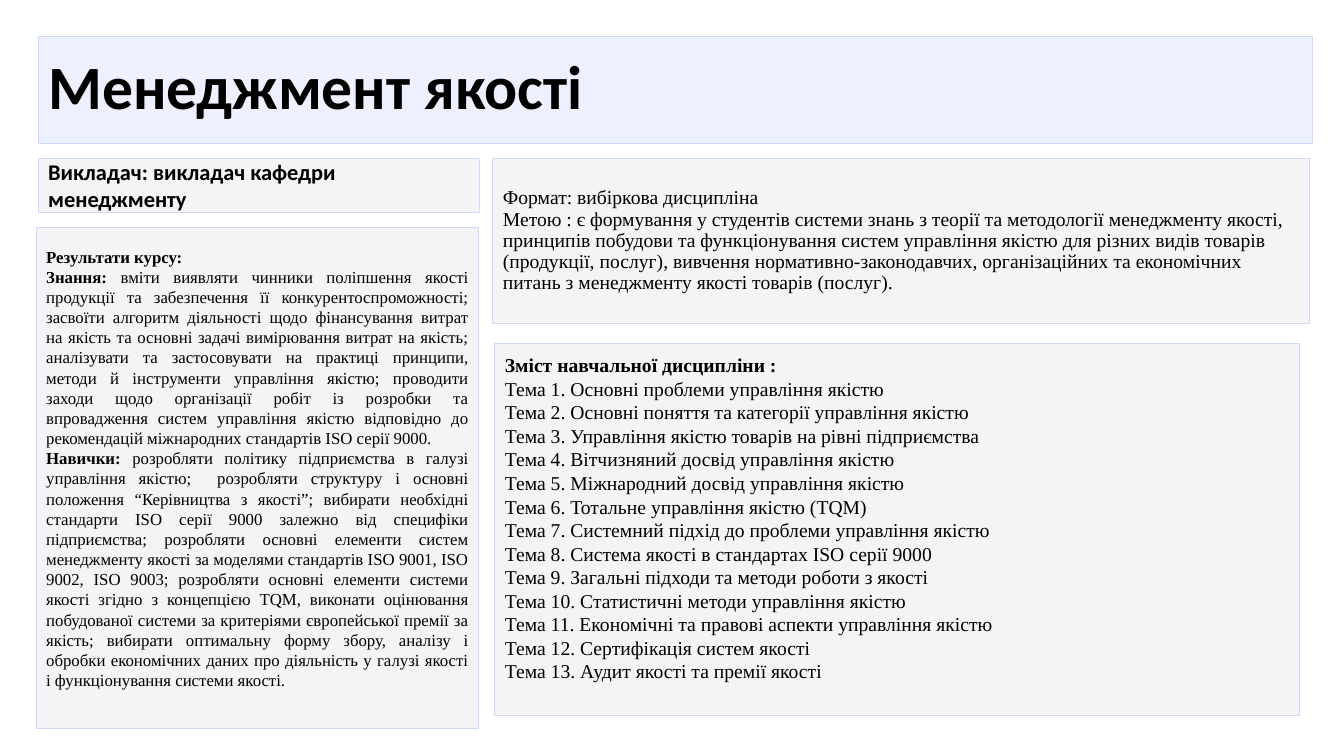
"""Build the course overview slide for quality management."""
import pptx
import pptx.dml.color
import pptx.enum.shapes
import pptx.enum.text
import pptx.util
from lxml import etree

RGBColor = pptx.dml.color.RGBColor
Align = pptx.enum.text.PP_ALIGN
Pt = pptx.util.Pt
BLACK = RGBColor(0x00, 0x00, 0x00)
TITLE_BLUE = RGBColor(0xE5, 0xEB, 0xFF)
PANEL_GRAY = RGBColor(0xF0, 0xF0, 0xF0)
BORDER_BLUE = RGBColor(0xCD, 0xD9, 0xFF)
SERIF, SANS = "Times New Roman", "Calibri"

course = pptx.Presentation()
course.slide_width = pptx.util.Inches(13.33)
course.slide_height = pptx.util.Inches(7.5)
slide = course.slides.add_slide(course.slide_layouts[6])


def add_panel(area, paragraphs, font, size, fill=PANEL_GRAY, opacity=69,
              align=Align.LEFT, spacing=1.0, spare_lines=0):
    """Add a panel; area is in percent of the slide, paragraphs are (bold, plain) pairs."""
    left, top, width, height = area
    panel = slide.shapes.add_shape(
        pptx.enum.shapes.MSO_SHAPE.RECTANGLE,
        int(course.slide_width * left / 100), int(course.slide_height * top / 100),
        int(course.slide_width * width / 100), int(course.slide_height * height / 100))
    panel.shadow.inherit = False
    panel.fill.solid()
    panel.fill.fore_color.rgb = fill
    color = panel.fill._xPr.find(".//" + pptx.oxml.ns.qn("a:srgbClr"))
    etree.SubElement(color, pptx.oxml.ns.qn("a:alpha"), val=str(opacity * 1000))
    panel.line.color.rgb = BORDER_BLUE
    panel.line.width = Pt(0.75)

    frame = panel.text_frame
    frame.word_wrap = True
    frame.vertical_anchor = pptx.enum.text.MSO_ANCHOR.MIDDLE
    frame.margin_bottom = Pt(3.6 + spare_lines * size * 1.2)
    for index, parts in enumerate(paragraphs):
        paragraph = frame.add_paragraph() if index else frame.paragraphs[0]
        paragraph.alignment = align
        paragraph.line_spacing = spacing
        for text, bold in zip(parts, (True, False)):
            if text:
                run = paragraph.add_run()
                run.text = text
                run.font.name = font
                run.font.size = Pt(size)
                run.font.bold = bold
                run.font.color.rgb = BLACK


topics = [
    "Основні проблеми управління якістю",
    "Основні поняття та категорії управління якістю",
    "Управління якістю товарів на рівні підприємства",
    "Вітчизняний досвід управління якістю",
    "Міжнародний досвід управління якістю",
    "Тотальне управління якістю (TQM)",
    "Системний підхід до проблеми управління якістю",
    "Система якості в стандартах ISO серії 9000",
    "Загальні підходи та методи роботи з якості",
    "Статистичні методи управління якістю",
    "Економічні та правові аспекти управління якістю",
    "Сертифікація систем якості",
    "Аудит якості та премії якості",
]
knowledge = (
    "вміти виявляти чинники поліпшення якості продукції та забезпечення її "
    "конкурентоспроможності; засвоїти алгоритм діяльності щодо фінансування витрат на "
    "якість та основні задачі вимірювання витрат на якість; аналізувати та застосовувати "
    "на практиці принципи, методи й інструменти управління якістю; проводити заходи щодо "
    "організації робіт із розробки та впровадження систем управління якістю відповідно до "
    "рекомендацій міжнародних стандартів ISO серії 9000.")
skills = (
    " розробляти політику підприємства в галузі управління якістю;  розробляти структуру "
    "і основні положення “Керівництва з якості”; вибирати необхідні стандарти ISO серії "
    "9000 залежно від специфіки підприємства; розробляти основні елементи систем "
    "менеджменту якості за моделями стандартів ISO 9001, ISO 9002, ISO 9003; розробляти "
    "основні елементи системи якості згідно з концепцією TQM, виконати оцінювання "
    "побудованої системи за критеріями європейської премії за якість; вибирати оптимальну "
    "форму збору, аналізу і обробки економічних даних про діяльність у галузі якості і "
    "функціонування системи якості.")
goal = (
    "Метою : є формування у студентів системи знань з теорії та методології менеджменту "
    "якості, принципів побудови та функціонування систем управління якістю для різних "
    "видів товарів (продукції, послуг), вивчення нормативно-законодавчих, організаційних "
    "та економічних питань з менеджменту якості товарів (послуг).")

add_panel((2.85, 4.8, 94.82, 14.13), [("Менеджмент якості", "")], SANS, 44,
          fill=TITLE_BLUE, opacity=70, spacing=0.9)
add_panel((36.83, 45.47, 59.86, 49.2),
          [("Зміст навчальної дисципліни :", "")]
          + [("", f"Тема {number}. {topic}") for number, topic in enumerate(topics, 1)],
          SERIF, 14, spare_lines=1)
add_panel((2.85, 20.93, 32.86, 7.2),
          [("Викладач: викладач кафедри менеджменту", "")], SANS, 16)
add_panel((2.7, 30.13, 32.93, 66.27),
          [("Результати курсу:", ""), ("Знання: ", knowledge), ("Навички:", skills)],
          SERIF, 12, align=Align.JUSTIFY, spare_lines=1)
add_panel((36.68, 20.93, 60.77, 21.87),
          [("", "Формат: вибіркова дисципліна"), ("", goal)], SERIF, 14, spacing=0.9)

course.save("out.pptx")
